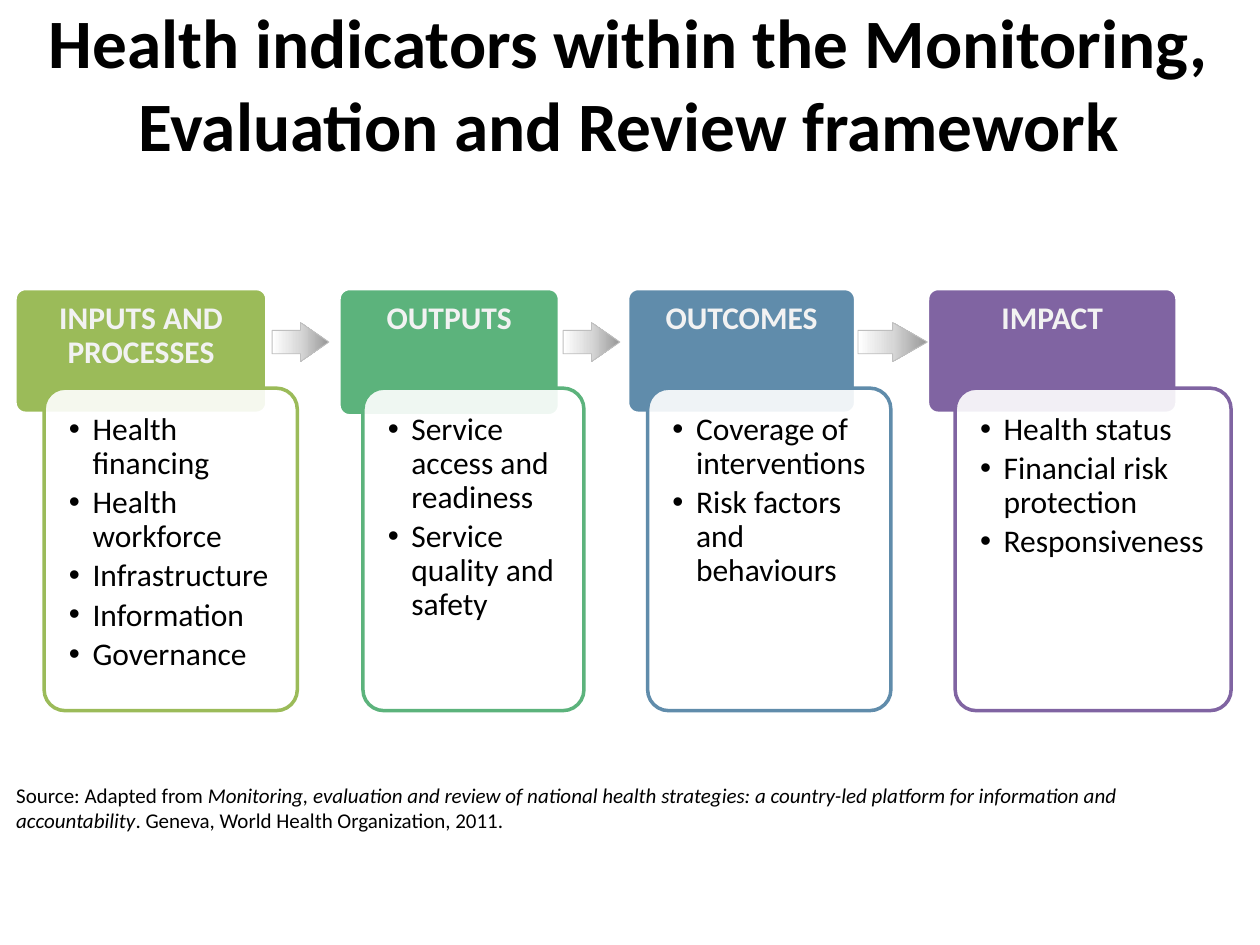
import copy

import pptx
import pptx.dml.color
import pptx.enum.shapes
import pptx.enum.text
import pptx.oxml.ns
import pptx.util
from lxml import etree

Pt = pptx.util.Pt
SHAPE = pptx.enum.shapes.MSO_SHAPE
ALIGN = pptx.enum.text.PP_ALIGN
ANCHOR = pptx.enum.text.MSO_ANCHOR
qn = pptx.oxml.ns.qn

BOX_TOP, BOX_HEIGHT = 164.9, 241.2
BODY_DROP = 56.9

COLUMNS = [
    dict(left=8.6, width=161.3, head=(144, 71.3), shift=16.6, color="9BBB59",
         label="INPUTS AND PROCESSES",
         items=["Health financing", "Health workforce", "Infrastructure",
                "Information", "Governance"]),
    dict(left=193.7, width=140, head=(126, 72.7), shift=13.7, color="5CB37C",
         label="OUTPUTS",
         items=["Service access and readiness", "Service quality and safety"]),
    dict(left=358.6, width=150.5, head=(130.3, 71.3), shift=11.5, color="608CAB",
         label="OUTCOMES",
         items=["Coverage of interventions", "Risk factors and behaviours"]),
    dict(left=530, width=173.5, head=(142.6, 71.3), shift=15.8, color="8064A2",
         label="IMPACT",
         items=["Health status", "Financial risk protection", "Responsiveness"]),
]
ARROWS = [(155.5, 32.4), (321.8, 32.4), (490.3, 39.6)]


def rgb(color):
    return pptx.dml.color.RGBColor.from_string(color)


def add_text(p, text, size=18, color="000000", bold=False, italic=False):
    r = p.add_run()
    r.text = text
    r.font.name = "Calibri"
    r.font.size = Pt(size)
    r.font.color.rgb = rgb(color)
    r.font.bold = bold
    r.font.italic = italic


def add_bullet(p, indent):
    pPr = p._p.get_or_add_pPr()
    pPr.set("marL", str(Pt(indent)))
    pPr.set("indent", str(-Pt(indent)))
    etree.SubElement(pPr, qn("a:buFont")).set("typeface", "Arial")
    etree.SubElement(pPr, qn("a:buChar")).set("char", "•")


def add_card(s, left, top, width, height, radius, fill, line, insets):
    sp = s.shapes.add_shape(SHAPE.ROUNDED_RECTANGLE,
                            Pt(left), Pt(top), Pt(width), Pt(height))
    sp.shadow.inherit = False
    sp.adjustments[0] = radius / min(width, height)
    sp.fill.solid()
    sp.fill.fore_color.rgb = rgb(fill)
    sp.line.color.rgb = rgb(line)
    sp.line.width = Pt(2)
    tf = sp.text_frame
    tf.word_wrap = True
    tf.vertical_anchor = ANCHOR.TOP
    corner = 0.29 * radius
    tf.margin_left, tf.margin_top, tf.margin_right, tf.margin_bottom = [
        Pt(inset - corner) for inset in insets]
    return sp


def add_column(s, left, top, width, height, head, shift, color, label, items):
    sp = add_card(s, left, top, *head, 6, color, "FFFFFF", (8, 8, 8, 17))
    p = sp.text_frame.paragraphs[0]
    p.alignment = ALIGN.CENTER
    p.line_spacing = 0.9
    add_text(p, label, color="F2F2F2", bold=True)

    sp = add_card(s, left + shift, top + BODY_DROP, width - shift,
                  height - BODY_DROP, 12, "FFFFFF", color, (14.2,) * 4)
    solid = sp._element.spPr.find(qn("a:solidFill"))
    etree.SubElement(solid[0], qn("a:alpha")).set("val", "90000")
    tf = sp.text_frame
    for i, item in enumerate(items):
        p = tf.add_paragraph() if i else tf.paragraphs[0]
        p.alignment = ALIGN.LEFT
        p.line_spacing = 0.9
        p.space_after = Pt(3)
        add_bullet(p, 13.5)
        add_text(p, item)


def add_arrow(s, left, top, width, height):
    sp = s.shapes.add_shape(SHAPE.RIGHT_ARROW,
                            Pt(left), Pt(top), Pt(width), Pt(height))
    sp.shadow.inherit = False
    sp.adjustments[0] = 0.6
    sp.adjustments[1] = width / 2 / height
    sp.fill.gradient()
    sp.fill.gradient_angle = 180
    gs_list = sp._element.spPr.find(qn("a:gradFill")).find(qn("a:gsLst"))
    gs_list.insert(1, copy.deepcopy(gs_list[0]))
    stops = [(0, "979797"), (0.5, "D7D7D7"), (1, "FFFFFF")]
    for stop, (position, color) in zip(sp.fill.gradient_stops, stops):
        stop.position = position
        stop.color.rgb = rgb(color)
    sp.line.color.rgb = rgb("BFBFBF")
    sp.line.width = Pt(0.5)


def add_title(s, left, top, width, height):
    sp = s.shapes.title
    sp.left, sp.top, sp.width, sp.height = Pt(left), Pt(top), Pt(width), Pt(height)
    tf = sp.text_frame
    tf.word_wrap = True
    tf.auto_size = pptx.enum.text.MSO_AUTO_SIZE.NONE
    tf.vertical_anchor = ANCHOR.MIDDLE
    p = tf.paragraphs[0]
    p.alignment = ALIGN.CENTER
    add_text(p, "Health indicators within the Monitoring, Evaluation and Review framework",
             size=39.6, bold=True)


def add_source(s, left, top, width, height):
    sp = s.shapes.add_textbox(Pt(left), Pt(top), Pt(width), Pt(height))
    tf = sp.text_frame
    tf.word_wrap = True
    p = tf.paragraphs[0]
    add_text(p, "Source: Adapted from ", size=12)
    add_text(p, "Monitoring, evaluation and review of national health strategies: "
                "a country-led platform for information and accountability",
             size=12, italic=True)
    add_text(p, ". Geneva, World Health Organization, 2011.", size=12)


def main():
    prs = pptx.Presentation()
    prs.slide_width, prs.slide_height = Pt(720), Pt(540)
    s = prs.slides.add_slide(prs.slide_layouts[5])
    add_title(s, -1.4, 2.2, 721.4, 90)
    for column in COLUMNS:
        add_column(s, top=BOX_TOP, height=BOX_HEIGHT, **column)
    for left, width in ARROWS:
        add_arrow(s, left, 184.3, width, 22.3)
    add_source(s, 2.2, 443.5, 701.3, 36.7)
    prs.save("out.pptx")


if __name__ == "__main__":
    main()
